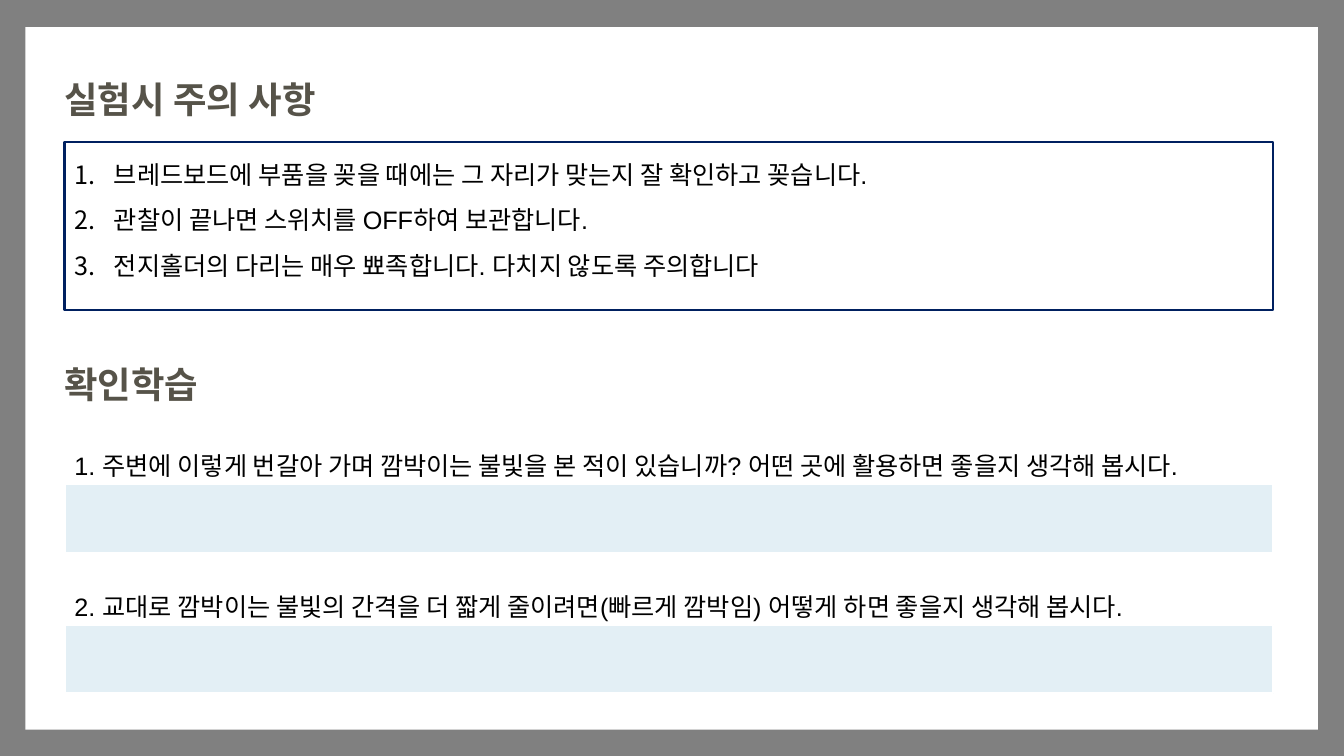
from lxml.etree import SubElement
from pptx import Presentation
from pptx.dml.color import RGBColor
from pptx.enum.shapes import MSO_SHAPE
from pptx.enum.text import MSO_ANCHOR, MSO_AUTO_SIZE, PP_ALIGN
from pptx.oxml.ns import qn
from pptx.util import Inches, Pt

W, H = Inches(13.33), Inches(7.5)
COLORS = {"back": "808080", "card": "FFFFFF", "heading": "565349",
          "text": "000000", "frame": "002060", "answer": "E3EFF5"}
LEFT, WIDTH = 4.8, 89.95
HEADING_LEFT, HEADING_SIZE = 4.05, (28.28, 6.4)
QUESTION_TOP, QUESTION_STEP, ANSWER_DROP = 56.93, 18.6, 7.13

PRECAUTIONS = [
    "브레드보드에 부품을 꽂을 때에는 그 자리가 맞는지 잘 확인하고 꽂습니다.",
    "관찰이 끝나면 스위치를 OFF하여 보관합니다.",
    "전지홀더의 다리는 매우 뾰족합니다. 다치지 않도록 주의합니다",
]
QUESTIONS = [
    "1. 주변에 이렇게 번갈아 가며 깜박이는 불빛을 본 적이 있습니까? 어떤 곳에 활용하면 좋을지 생각해 봅시다.",
    "2. 교대로 깜박이는 불빛의 간격을 더 짧게 줄이려면(빠르게 깜박임) 어떻게 하면 좋을지 생각해 봅시다.",
]


def rgb(name):
    return RGBColor.from_string(COLORS[name])


def box(x, y, w, h):
    return [round(W * x / 100), round(H * y / 100),
            round(W * w / 100), round(H * h / 100)]


def place(shape, *shares):
    shape.left, shape.top, shape.width, shape.height = box(*shares)


def paint(shape, fill, line=None):
    shape.fill.solid()
    shape.fill.fore_color.rgb = rgb(fill)
    if line:
        shape.line.color.rgb = rgb(line)
        shape.line.width = Pt(1.5)
    else:
        shape.line.fill.background()


def add_panel(s, shares, fill, line=None):
    panel = s.shapes.add_shape(MSO_SHAPE.RECTANGLE, *box(*shares))
    panel.shadow.inherit = False
    paint(panel, fill, line)
    return panel


def set_frame(tf):
    tf.word_wrap = True
    tf.auto_size = MSO_AUTO_SIZE.NONE
    tf.vertical_anchor = MSO_ANCHOR.TOP


def format_runs(p, font, size, color, bold=False):
    p.alignment = PP_ALIGN.LEFT
    for r in p.runs:
        r.font.name, r.font.size, r.font.bold = font, Pt(size), bold
        r.font.color.rgb = rgb(color)


def write_heading(shape, text):
    tf = shape.text_frame
    tf.text = text
    set_frame(tf)
    tf.margin_left = tf.margin_right = Inches(0.1)
    tf.margin_top = tf.margin_bottom = Inches(0.1)
    format_runs(tf.paragraphs[0], "Cabin", 26, "heading", True)


def write_body(p, text):
    p.text = text
    p.line_spacing = 1.5
    p.space_before = Pt(0)
    format_runs(p, "Arial", 18, "text")


def number(p, indent):
    pPr = p._p.get_or_add_pPr()
    pPr.set("marL", str(indent))
    pPr.set("indent", str(-indent))
    SubElement(pPr, qn("a:buFont"), typeface="Arial")
    SubElement(pPr, qn("a:buAutoNum"), type="arabicPeriod")


def write_list(shape, items):
    tf = shape.text_frame
    set_frame(tf)
    tf.margin_top = Inches(0.02)
    for i, item in enumerate(items):
        p = tf.add_paragraph() if i else tf.paragraphs[0]
        write_body(p, item)
        number(p, Inches(0.39))


def add_question(s, top, text):
    tb = s.shapes.add_textbox(*box(LEFT, top, 93, 7.47))
    set_frame(tb.text_frame)
    write_body(tb.text_frame.paragraphs[0], text)
    add_panel(s, (LEFT, top + ANSWER_DROP, WIDTH, 9.07), "answer", "card")


def main():
    prs = Presentation()
    prs.slide_width, prs.slide_height = W, H
    s = prs.slides.add_slide(prs.slide_layouts[1])
    s.background.fill.solid()
    s.background.fill.fore_color.rgb = rgb("back")

    card = add_panel(s, (1.88, 3.6, 96.17, 92.93), "card")
    s.shapes.element.insert(2, card.element)

    title, body = s.placeholders
    place(title, HEADING_LEFT, 8.93, *HEADING_SIZE)
    write_heading(title, "실험시 주의 사항")
    place(body, LEFT, 18.8, WIDTH, 22.27)
    paint(body, "card", "frame")
    write_list(body, PRECAUTIONS)

    review = s.shapes.add_textbox(*box(HEADING_LEFT, 46.53, *HEADING_SIZE))
    write_heading(review, "확인학습")
    for i, question in enumerate(QUESTIONS):
        add_question(s, QUESTION_TOP + i * QUESTION_STEP, question)

    prs.save("out.pptx")


if __name__ == "__main__":
    main()
